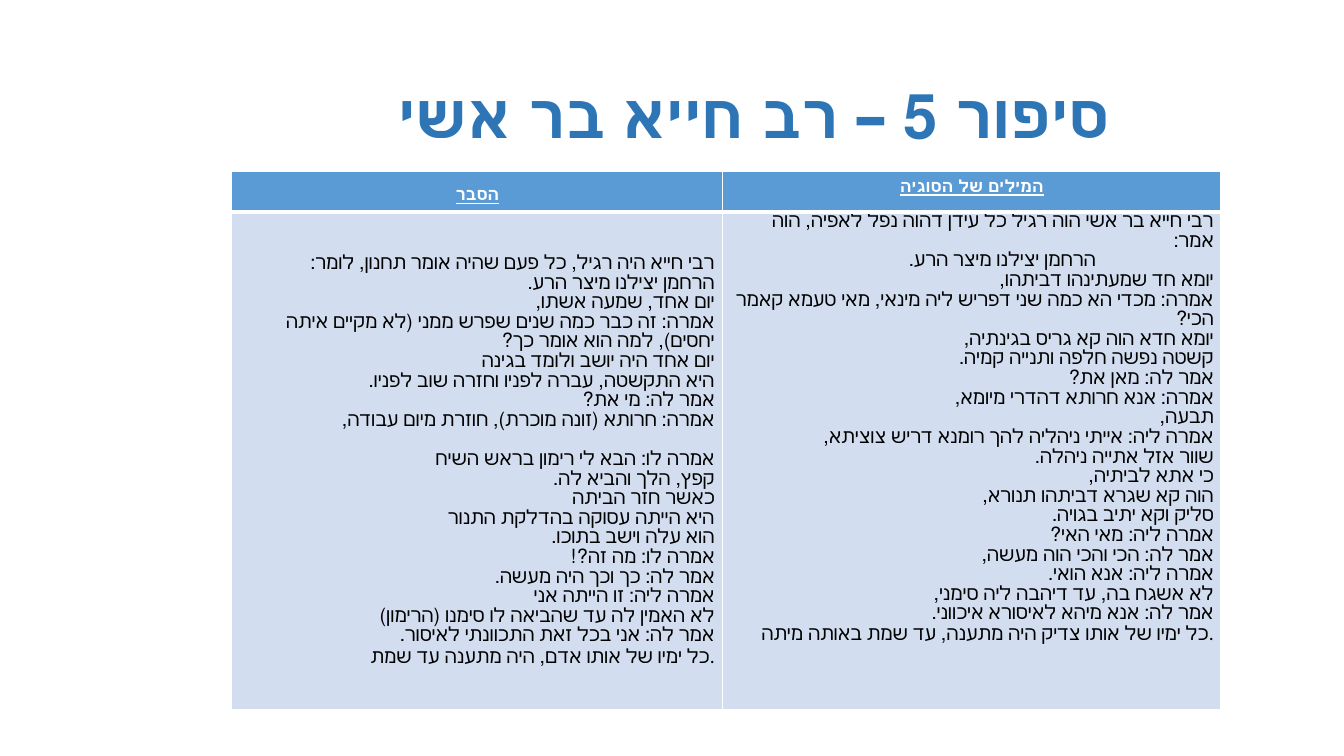
from pptx import Presentation
from pptx.dml.color import RGBColor
from pptx.enum.text import MSO_ANCHOR, PP_ALIGN
from pptx.oxml.ns import qn
from pptx.util import Inches, Pt
from lxml.etree import SubElement

HUES = {"title": "2E75B6", "head": "5B9BD5", "body": "D2DEEF",
        "white": "FFFFFF", "black": "000000"}
HEADS = ["הסבר", "המילים של הסוגיה"]
GLOSS = """רבי חייא היה רגיל, כל פעם שהיה אומר תחנון, לומר:
הרחמן יצילנו מיצר הרע.
יום אחד, שמעה אשתו,
אמרה: זה כבר כמה שנים שפרש ממני (לא מקיים איתה יחסים), למה הוא אומר כך?
יום אחד היה יושב ולומד בגינה
היא התקשטה, עברה לפניו וחזרה שוב לפניו.
אמר לה: מי את?
אמרה: חרותא (זונה מוכרת), חוזרת מיום עבודה,
אמרה לו: הבא לי רימון בראש השיח
קפץ, הלך והביא לה.
כאשר חזר הביתה
היא הייתה עסוקה בהדלקת התנור
הוא עלה וישב בתוכו.
אמרה לו: מה זה?!
אמר לה: כך וכך היה מעשה.
אמרה ליה: זו הייתה אני
לא האמין לה עד שהביאה לו סימנו (הרימון)
אמר לה: אני בכל זאת התכוונתי לאיסור.
כל ימיו של אותו אדם, היה מתענה עד שמת."""
TALE = """רבי חייא בר אשי הוה רגיל כל עידן דהוה נפל לאפיה, הוה אמר:
הרחמן יצילנו מיצר הרע.
יומא חד שמעתינהו דביתהו,
אמרה: מכדי הא כמה שני דפריש ליה מינאי, מאי טעמא קאמר הכי?
יומא חדא הוה קא גריס בגינתיה,
קשטה נפשה חלפה ותנייה קמיה.
אמר לה: מאן את?
אמרה: אנא חרותא דהדרי מיומא,
תבעה,
אמרה ליה: אייתי ניהליה להך רומנא דריש צוציתא,
שוור אזל אתייה ניהלה.
כי אתא לביתיה,
הוה קא שגרא דביתהו תנורא,
סליק וקא יתיב בגויה.
אמרה ליה: מאי האי?
אמר לה: הכי והכי הוה מעשה,
אמרה ליה: אנא הואי.
לא אשגח בה, עד דיהבה ליה סימני,
אמר לה: אנא מיהא לאיסורא איכווני.
כל ימיו של אותו צדיק היה מתענה, עד שמת באותה מיתה."""
FORMS = {
    "title": {"name": "Cambria", "size": Pt(44), "bold": True},
    "head": {"name": "Times New Roman", "size": Pt(12), "bold": True,
             "underline": True},
    "body": {"name": "Calibri", "size": Pt(14), "bold": False},
}


def write(para, text, form, hue, align, rtl=True):
    """Put one Hebrew run in the paragraph."""
    para.alignment = align
    para._p.get_or_add_pPr().set("rtl", "1" if rtl else "0")
    run = para.add_run()
    run.text = text
    for key, value in FORMS[form].items():
        setattr(run.font, key, value)
    run.font.color.rgb = RGBColor.from_string(HUES[hue])
    run._r.get_or_add_rPr().set("lang", "he-IL")


def edge(cell, widths):
    """Draw white cell borders; widths in points for L, R, T, B."""
    props = cell._tc.get_or_add_tcPr()
    for spot, (side, width) in enumerate(zip("LRTB", widths)):
        line = SubElement(props, qn(f"a:ln{side}"), w=str(Pt(width)))
        fill = SubElement(line, qn("a:solidFill"))
        SubElement(fill, qn("a:srgbClr"), val=HUES["white"])
        props.insert(spot, line)


deck = Presentation()
deck.slide_width, deck.slide_height = Inches(13.33), Inches(7.5)
slide = deck.slides.add_slide(deck.slide_layouts[5])

title = slide.shapes.title
title.left, title.top = Inches(2.54), Inches(0.4)
title.width, title.height = Inches(9.88), Inches(1.45)
title.text_frame.vertical_anchor = MSO_ANCHOR.MIDDLE
write(title.text_frame.paragraphs[0], "סיפור 5 – רב חייא בר אשי",
      "title", "title", PP_ALIGN.CENTER)

cols, rows = [4.87, 4.94], [0.4, 4.94]
table = slide.shapes.add_table(2, 2, Inches(2.3), Inches(1.7),
                               Inches(sum(cols)), Inches(sum(rows))).table
table.horz_banding = False
for col, width in zip(table.columns, cols):
    col.width = Inches(width)
for row, height in zip(table.rows, rows):
    row.height = Inches(height)

pads = [(0.08, 0.08), (0.07, 0)]
anchors = [MSO_ANCHOR.MIDDLE, MSO_ANCHOR.TOP]
for c, texts in enumerate(zip(HEADS, [GLOSS, TALE])):
    for r, text in enumerate(texts):
        cell = table.cell(r, c)
        form = ["head", "body"][r]
        cell.fill.solid()
        cell.fill.fore_color.rgb = RGBColor.from_string(HUES[form])
        cell.vertical_anchor = anchors[c]
        cell.margin_left = cell.margin_right = Inches(pads[c][0])
        cell.margin_top = cell.margin_bottom = Inches(pads[c][1])
        edge(cell, [(1, 1, 1, 3), (1, 1, 3, 1)][r])
        lines = text.split("\n")
        frame = cell.text_frame
        for i, line in enumerate(lines):
            para = frame.add_paragraph() if i else frame.paragraphs[0]
            last = r == 1 and i == len(lines) - 1
            write(para, line, form, ["white", "black"][r],
                  [PP_ALIGN.CENTER, PP_ALIGN.RIGHT][r], not last)
            para.line_spacing = Pt([17.5, 14][r])
            if last:
                para.space_before = Pt(2)

# The pomegranate scene stands apart; the prayer is set in from the right.
table.cell(1, 0).text_frame.paragraphs[8].space_before = Pt(14)
prayer = table.cell(1, 1).text_frame.paragraphs[1]
prayer._p.get_or_add_pPr().set("indent", str(Inches(1.17)))

deck.save("out.pptx")
